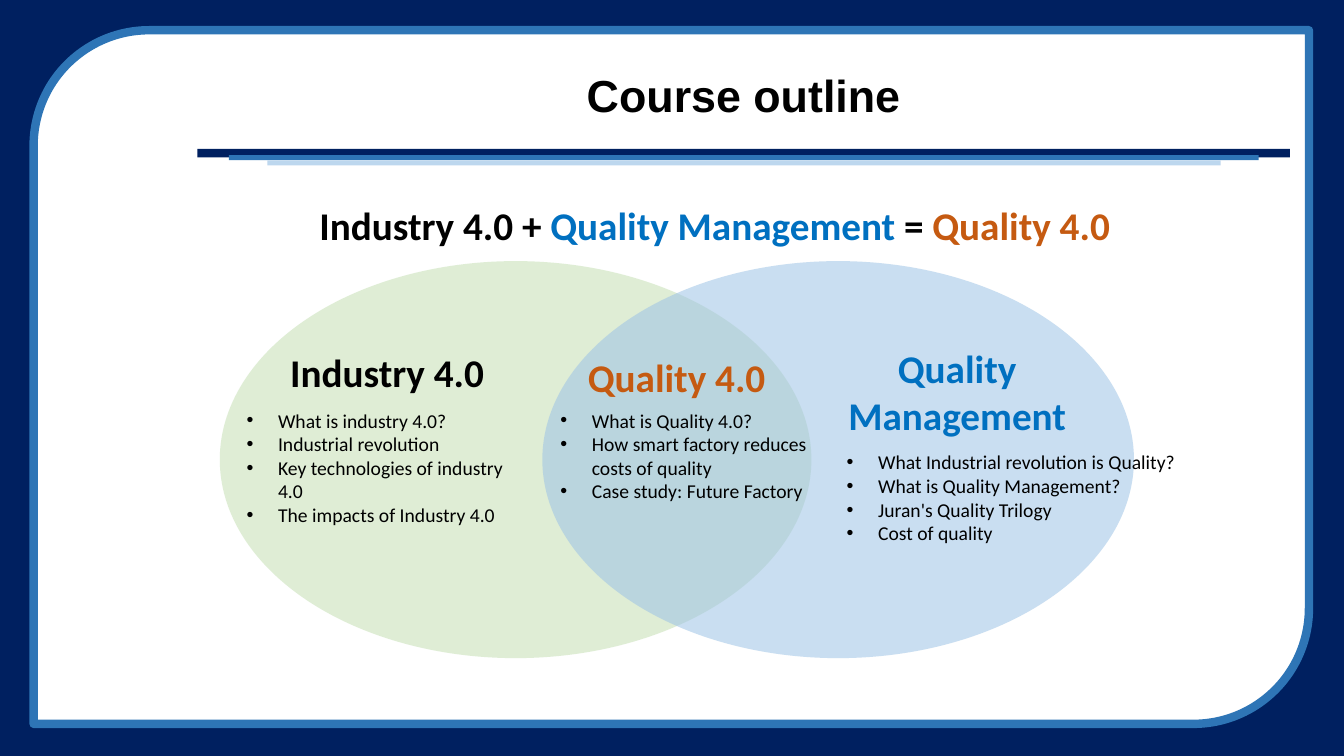
"""Build the course outline slide: two overlapping ellipses and their topics."""
from lxml.etree import SubElement
from pptx import Presentation
from pptx.dml.color import RGBColor
from pptx.enum.shapes import MSO_SHAPE
from pptx.enum.text import MSO_ANCHOR, MSO_AUTO_SIZE, PP_ALIGN
from pptx.oxml.ns import qn
from pptx.util import Pt

NAVY = RGBColor(0x00, 0x20, 0x60)
STEEL = RGBColor(0x2E, 0x75, 0xB6)
PALE = RGBColor(0xBD, 0xD7, 0xEE)
GREEN = RGBColor(0xC5, 0xE0, 0xB4)
SKY = RGBColor(0x9D, 0xC3, 0xE6)
BLUE = RGBColor(0x00, 0x70, 0xC0)
RUST = RGBColor(0xC5, 0x5A, 0x11)
BLACK = RGBColor(0, 0, 0)
WHITE = RGBColor(255, 255, 255)

deck = Presentation()
deck.slide_width, deck.slide_height = Pt(960), Pt(540)
slide = deck.slides.add_slide(deck.slide_layouts[5])
shapes = slide.shapes


def draw(kind, spot, color, alpha=None):
    shape = shapes.add_shape(kind, *map(Pt, spot))
    shape.shadow.inherit = False
    shape.fill.solid()
    shape.fill.fore_color.rgb = color
    shape.line.fill.background()
    if alpha:
        tint = shape.fill._xPr.find(".//" + qn("a:srgbClr"))
        SubElement(tint, qn("a:alpha"), val=str(alpha * 1000))
    return shape


def write(lines, spot, box=None, size=28, font="Calibri", bold=True,
          align=PP_ALIGN.CENTER, anchor=MSO_ANCHOR.TOP, space=1.0, indent=None):
    box = box or shapes.add_textbox(0, 0, 0, 0)
    box.left, box.top, box.width, box.height = map(Pt, spot)
    frame = box.text_frame
    frame.word_wrap = True
    frame.auto_size = MSO_AUTO_SIZE.NONE
    frame.vertical_anchor = anchor
    for i, runs in enumerate(lines):
        para = frame.add_paragraph() if i else frame.paragraphs[0]
        if indent:
            props = para._p.get_or_add_pPr()
            props.set("marL", str(Pt(indent)))
            props.set("indent", str(Pt(-22.5)))
            SubElement(props, qn("a:buFont"), typeface="Arial")
            SubElement(props, qn("a:buChar"), char="•")
        para.alignment = align
        para.line_spacing = space
        for text, color in runs:
            run = para.add_run()
            run.text = text
            run.font.name = font
            run.font.size = Pt(size)
            run.font.bold = bold
            run.font.color.rgb = color


draw(MSO_SHAPE.RECTANGLE, (0, 0, 960, 540), NAVY)
panel = draw(MSO_SHAPE.ROUND_2_DIAG_RECTANGLE, (24, 21.6, 911, 495.5), WHITE)
panel.line.color.rgb = STEEL
panel.line.width = Pt(6)

for left, top, width, height, color in [
    (141, 106.4, 780.5, 6, NAVY),
    (163.5, 110.8, 735.5, 3.6, STEEL),
    (191, 114.5, 681, 3.6, PALE),
]:
    draw(MSO_SHAPE.RECTANGLE, (left, top, width, height), color)

title = shapes.title
shapes.element.append(title.element)
write([[("Course outline", BLACK)]], (141, 35, 780.5, 70), box=title,
      size=32, font="Arial", anchor=MSO_ANCHOR.MIDDLE, space=0.9)

for left, color in [(157, GREEN), (387.4, SKY)]:
    draw(MSO_SHAPE.OVAL, (left, 186.5, 422.6, 283.6), color, alpha=55)

for text, color, spot in [
    ("Industry 4.0", BLACK, (185, 245, 183, 41)),
    ("Quality Management", BLUE, (585.4, 242.4, 196.6, 75)),
    ("Quality 4.0", RUST, (385, 248.6, 196.6, 41)),
]:
    write([[(text, color)]], spot)

for topics, spot, indent in [
    (["What Industrial revolution is Quality?", "What is Quality Management?",
      "Juran's Quality Trilogy", "Cost of quality"],
     (597.6, 318.2, 291.6, 75), 22.5),
    (["What is industry 4.0?", "Industrial revolution",
      "Key technologies of industry 4.0", "The impacts of Industry 4.0"],
     (169, 288.2, 218, 75), 22.5),
    (["What is Quality 4.0?", "How smart factory reduces costs of quality",
      "Case study: Future Factory"],
     (357.2, 288.2, 236, 75), 58.5),
]:
    write([[(topic, BLACK)] for topic in topics], spot, size=14, bold=False,
          align=PP_ALIGN.LEFT, indent=indent)

write([[("Industry 4.0 + ", BLACK), ("Quality Management ", BLUE),
        ("= ", BLACK), ("Quality 4.0", RUST)]], (163, 140.4, 695, 41))

deck.save("out.pptx")
